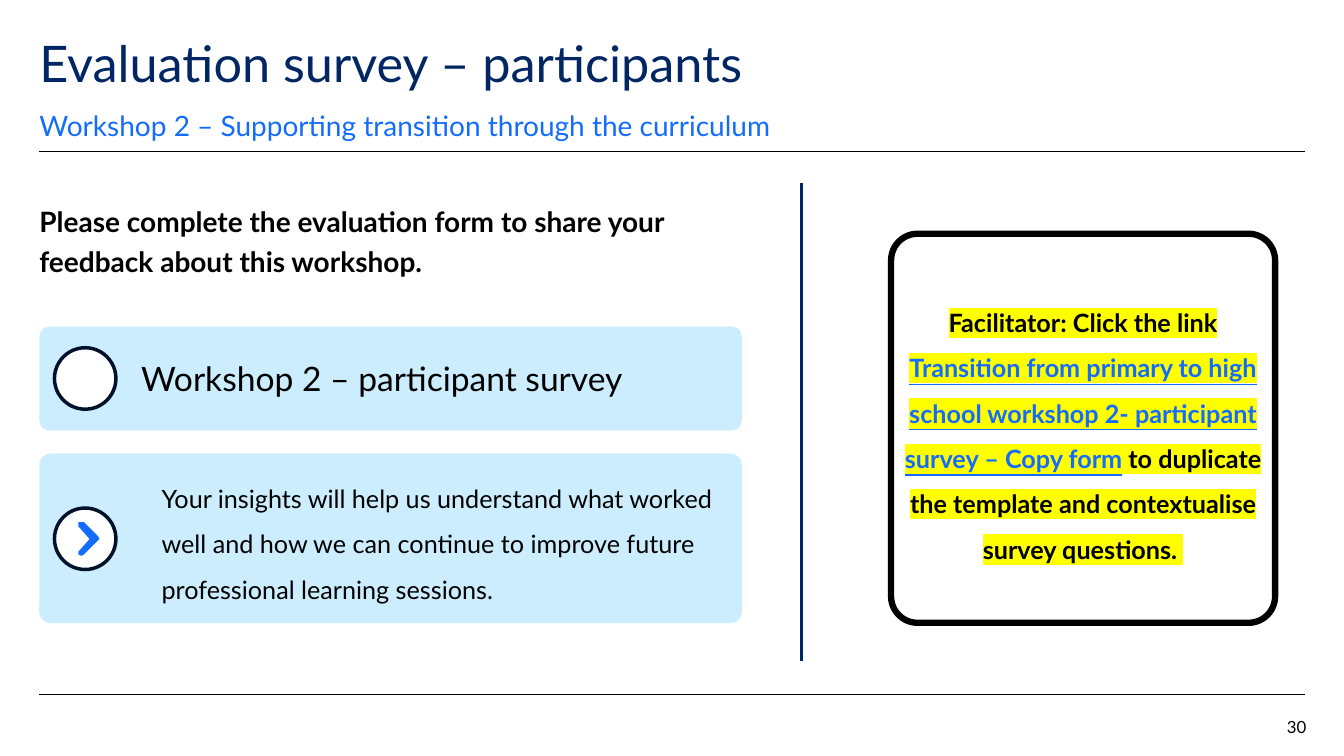
import pptx
import pptx.util
import pptx.dml.color
import pptx.enum.shapes
import pptx.enum.text
import pptx.oxml.ns
from lxml import etree

Pt = pptx.util.Pt
SHAPE = pptx.enum.shapes.MSO_SHAPE
ALIGN = pptx.enum.text.PP_ALIGN
ANCHOR = pptx.enum.text.MSO_ANCHOR
qn = pptx.oxml.ns.qn

FONT = "Lato"
NAVY, BLUE, PALE = "002664", "146CFD", "CBEDFD"
BLACK, WHITE, INK, YELLOW = "000000", "FFFFFF", "00112C", "FFFF00"
LEFT, RIGHT = 28.1, 932.4
WIDE = 793.4
CARD = 501.8


def rgb(color):
    return pptx.dml.color.RGBColor.from_string(color)


def paint(shape, fill=None, line=None, width=0):
    shape.shadow.inherit = False
    if fill:
        shape.fill.solid()
        shape.fill.fore_color.rgb = rgb(fill)
    else:
        shape.fill.background()
    if line:
        shape.line.color.rgb = rgb(line)
        shape.line.width = Pt(width)
    else:
        shape.line.fill.background()


def write(shape, text, size, color=BLACK, bold=False, align=ALIGN.LEFT,
          anchor=ANCHOR.TOP, inset=(0, 0, 0, 0), space=1, after=0):
    """Set one paragraph; inset is left, top, right, bottom."""
    frame = shape.text_frame
    frame.word_wrap = True
    frame.vertical_anchor = anchor
    (frame.margin_left, frame.margin_top,
     frame.margin_right, frame.margin_bottom) = map(Pt, inset)
    para = frame.paragraphs[0]
    para.alignment = align
    para.line_spacing = space
    para.space_after = Pt(after)
    para.font.name = FONT
    para.font.size = Pt(size)
    para.font.bold = bold
    para.font.color.rgb = rgb(color)
    if text:
        para.add_run().text = text
    return para


def label(slide, box, text, size, **style):
    shape = slide.shapes.add_textbox(*map(Pt, box))
    write(shape, text, size, **style)


def panel(slide, box, round_by, **look):
    shape = slide.shapes.add_shape(SHAPE.ROUNDED_RECTANGLE, *map(Pt, box))
    shape.adjustments[0] = round_by
    paint(shape, **look)
    return shape


def circle(slide, top):
    shape = slide.shapes.add_shape(
        SHAPE.OVAL, Pt(38.9), Pt(top), Pt(43.9), Pt(43.9))
    paint(shape, WHITE, INK, 2.5)


def chevron(slide, left, mid):
    """Draw a right-pointing arrow with softened ends."""
    upper = [(0.2, -9), (0, -10), (0.8, -11.4), (2.4, -12), (4.2, -11.4),
             (14.2, -1.8), (15, 0)]
    lower = [(x, -y) for x, y in reversed(upper[:-1])]
    points = [(left + x, mid + y) for x, y in [(8.4, 0)] + upper + lower]
    outline = slide.shapes.build_freeform(*points[0], scale=float(Pt(1)))
    outline.add_line_segments(points[1:], close=True)
    paint(outline.convert_to_shape(), BLUE)


def rule(slide, start, end, color, width):
    line = slide.shapes.add_connector(
        pptx.enum.shapes.MSO_CONNECTOR.STRAIGHT, *map(Pt, start + end))
    line.line.color.rgb = rgb(color)
    line.line.width = Pt(width)
    etree.SubElement(line._element.spPr, qn("a:effectLst"))


def mark(para, text, color, under):
    """Add a run on a yellow highlight."""
    run = para.add_run()
    run.text = text
    run.font.color.rgb = rgb(color)
    run.font.underline = under
    glow = etree.SubElement(run.font._element, qn("a:highlight"))
    etree.SubElement(glow, qn("a:srgbClr"), val=YELLOW)


def main():
    deck = pptx.Presentation()
    deck.slide_width, deck.slide_height = Pt(960), Pt(540)
    slide = deck.slides.add_slide(deck.slide_layouts[6])

    for y in (108, 496.1):
        rule(slide, (LEFT, y), (RIGHT, y), BLACK, 0.5)
    label(slide, (LEFT, 28.1, WIDE, 43.2), "Evaluation survey – participants",
          36, color=NAVY, space=0.9)
    label(slide, (LEFT, 77, WIDE, 24.5),
          "Workshop 2 – Supporting transition through the curriculum",
          20, color=BLUE, anchor=ANCHOR.BOTTOM, space=1.5, after=12)
    label(slide, (LEFT, 141.1, 507.6, 70.6),
          "Please complete the evaluation form to share your feedback "
          "about this workshop.", 20, bold=True, space=1.2, after=12)

    survey = panel(slide, (LEFT, 233.3, CARD, 74.2), 0.097, fill=PALE)
    write(survey, "Workshop 2 – participant survey", 24,
          anchor=ANCHOR.MIDDLE, inset=(70.6, 36.7, 14.4, 36.7))
    circle(slide, 248.4)

    reason = panel(slide, (LEFT, 324, CARD, 121), 0.066, fill=PALE)
    write(reason, "Your insights will help us understand what worked well and "
          "how we can continue to improve future professional learning "
          "sessions.", 18, anchor=ANCHOR.MIDDLE,
          inset=(85, 39.6, 17.3, 42.5), space=1.5, after=12)
    circle(slide, 362.9)
    chevron(slide, 55.6, 384.6)

    rule(slide, (572.4, 131), (572.4, 472.3), NAVY, 2.5)
    note = panel(slide, (636.5, 167, 274.3, 277.9), 0.069,
                 line=BLACK, width=4.5)
    para = write(note, "", 18, bold=True, align=ALIGN.CENTER,
                 anchor=ANCHOR.MIDDLE, space=1.5)
    mark(para, "Facilitator: Click the link ", BLACK, False)
    mark(para, "Transition from primary to high school workshop 2- "
         "participant survey – Copy form", BLUE, True)
    mark(para, " to duplicate the template and contextualise survey "
         "questions. ", BLACK, False)

    label(slide, (876.2, 513.4, 56.9, 14.4), "30", 12,
          align=ALIGN.RIGHT, space=0.9, after=6)
    deck.save("out.pptx")


if __name__ == "__main__":
    main()
